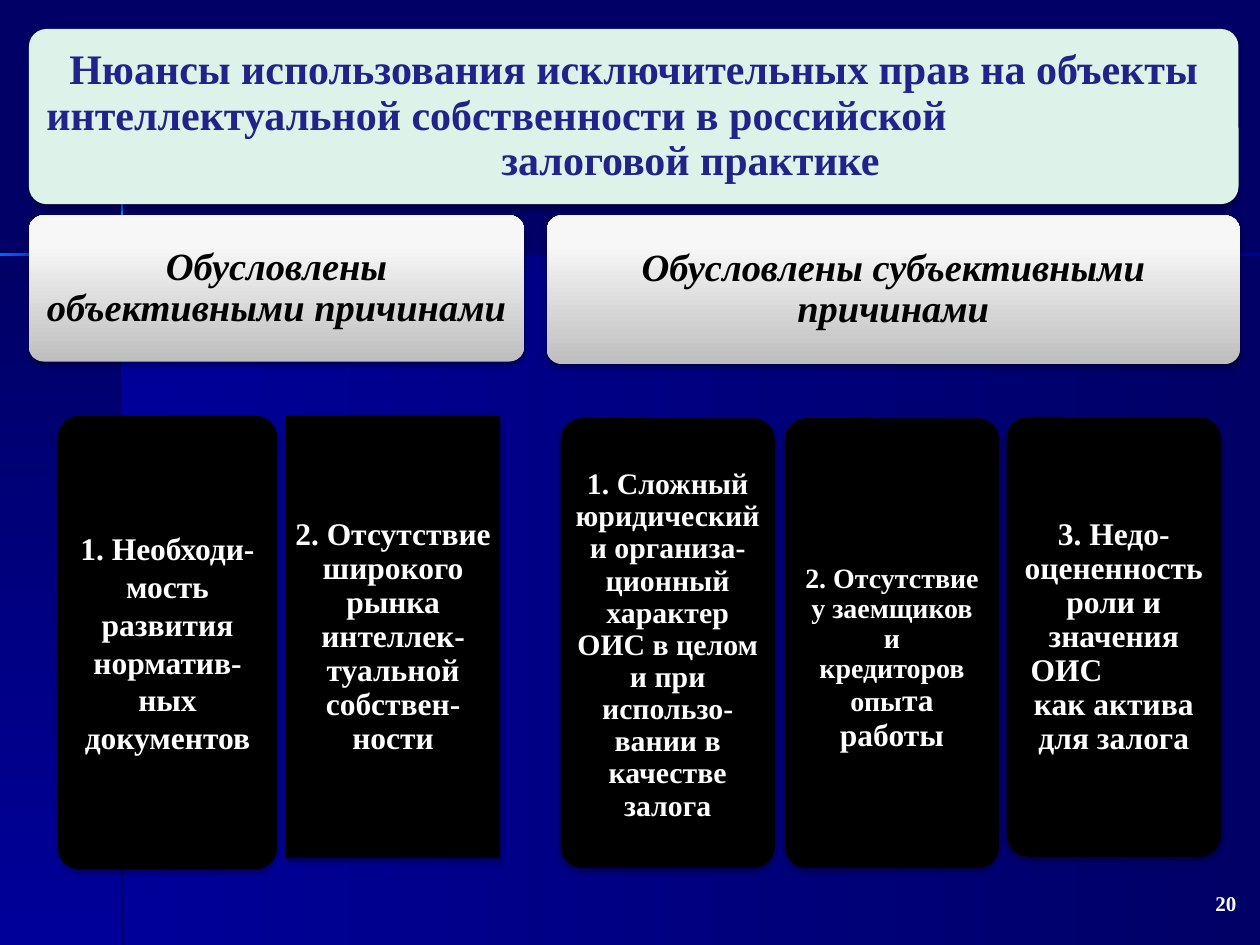
from lxml import etree
from pptx import Presentation
from pptx.dml.color import RGBColor
from pptx.enum.shapes import MSO_SHAPE
from pptx.enum.text import MSO_ANCHOR, PP_ALIGN
from pptx.oxml.ns import qn
from pptx.util import Inches, Pt

RECT, ROUND = MSO_SHAPE.RECTANGLE, MSO_SHAPE.ROUNDED_RECTANGLE
LEFT, CENTER, RIGHT = PP_ALIGN.LEFT, PP_ALIGN.CENTER, PP_ALIGN.RIGHT
MIDDLE = MSO_ANCHOR.MIDDLE
FONT = "Times New Roman"
COLORS = {
    "navy": "000066", "blue": "000099", "bright": "0066FF", "cream": "FFFFCC",
    "mint": "DDF3EA", "title": "22228B", "black": "000000", "white": "FFFFFF",
    "grey": "BEBEBE", "pale": "F7F7F7", "paler": "F8F8F8",
}
SILVER = [(0, "grey"), (80, "pale"), (100, "paler")]


def rgb(name):
    return RGBColor.from_string(COLORS[name])


def fill_gradient(sp, stops, angle):
    """Fill with (percent, colour) stops; the angle runs clockwise."""
    sp.fill.gradient()
    sp.fill.gradient_angle = (360 - angle) % 360
    gs_list = sp._element.spPr.find(qn("a:gradFill")).find(qn("a:gsLst"))
    for gs in list(gs_list):
        gs_list.remove(gs)
    for pos, name in stops:
        gs = etree.SubElement(gs_list, qn("a:gs"), pos=str(pos * 1000))
        etree.SubElement(gs, qn("a:srgbClr"), val=COLORS[name])


def add_block(s, kind, box, fill, angle=270):
    """Add a borderless shape; fill is a colour name or a list of stops."""
    sp = s.shapes.add_shape(kind, *map(Inches, box))
    sp.shadow.inherit = False
    sp.line.fill.background()
    if kind == ROUND:
        sp.adjustments[0] = 0.1
    if isinstance(fill, str):
        sp.fill.solid()
        sp.fill.fore_color.rgb = rgb(fill)
    else:
        fill_gradient(sp, fill, angle)
    return sp


def add_shadow(sp):
    effects = sp._element.spPr.find(qn("a:effectLst"))
    shadow = etree.SubElement(
        effects, qn("a:outerShdw"), blurRad=str(Pt(3.1)), dist=str(Pt(1.8)),
        dir="5400000", rotWithShape="0")
    clr = etree.SubElement(shadow, qn("a:srgbClr"), val=COLORS["black"])
    etree.SubElement(clr, qn("a:alpha"), val="35000")


def set_text(sp, paragraphs, size, color, inset, extra_top=0, spacing=0.9, italic=False):
    """Write paragraphs given as (text, alignment, left indent)."""
    tf = sp.text_frame
    tf.word_wrap = True
    tf.vertical_anchor = MIDDLE
    tf.margin_left = tf.margin_right = tf.margin_bottom = Inches(inset)
    tf.margin_top = Inches(inset + extra_top)
    for i, (text, align, indent) in enumerate(paragraphs):
        p = tf.paragraphs[0] if i == 0 else tf.add_paragraph()
        p.text = text
        p.alignment = align
        p.line_spacing = spacing
        if indent:
            p._p.get_or_add_pPr().set("marL", str(Inches(indent)))
        p.font.name, p.font.size = FONT, Pt(size)
        p.font.bold, p.font.italic = True, italic
        p.font.color.rgb = rgb(color)
    return tf


def add_backdrop(s):
    """Background panels and the thin glowing cross."""
    s.background.fill.solid()
    s.background.fill.fore_color.rgb = rgb("navy")
    panels = [
        ((0.97, 2.02, 9.03, 5.48), 180, ("navy", "blue")),
        ((0, 2.02, 0.97, 5.48), 90, ("navy", "blue")),
    ]
    vertical = [
        (0.01, 1.21, ("navy", "blue")),
        (2.82, 4.68, ("blue", "navy")),
        (2.38, 0.44, ("bright", "blue")),
        (1.21, 0.44, ("blue", "bright")),
        (1.65, 0.73, ("bright", "cream", "bright")),
    ]
    horizontal = [
        (1.77, 8.23, ("blue", "navy")),
        (0, 0.61, ("blue", "bright")),
        (1.33, 0.44, ("bright", "blue")),
        (0.6, 0.73, ("cream", "bright", "cream")),
    ]
    parts = panels
    parts += [((0.96, y, 0.02, h), 90, names) for y, h, names in vertical]
    parts += [((x, 2.01, w, 0.02), 180, names) for x, w, names in horizontal]
    for box, angle, names in parts:
        step = 100 // (len(names) - 1)
        stops = [(i * step, name) for i, name in enumerate(names)]
        add_block(s, RECT, box, stops, angle)


def add_title(s):
    sp = add_block(s, ROUND, (0.23, 0.23, 9.6, 1.39), "mint")
    add_shadow(sp)
    set_text(sp, [
        ("Нюансы использования исключительных прав на объекты", CENTER, 0),
        ("интеллектуальной собственности в российской", LEFT, 0),
        ("залоговой практике", CENTER, 0.9),
    ], 24, "title", 0.1)


def add_heading(s, box, text):
    sp = add_block(s, ROUND, box, SILVER)
    add_shadow(sp)
    set_text(sp, [(text, CENTER, 0)], 22, "black", 0.09, italic=True)


def add_card(s, box, paragraphs, size=18, kind=ROUND, **options):
    sp = add_block(s, kind, box, "black")
    add_shadow(sp)
    return set_text(sp, paragraphs, size, "white", **{"inset": 0.07, **options})


def add_page_number(s, number):
    box = s.shapes.add_textbox(*map(Inches, (7.44, 6.9, 2.47, 0.49)))
    tf = set_text(box, [(number, RIGHT, 0)], 12, "white", 0.1, spacing=1)
    tf.margin_bottom = Inches(0.05)


def main():
    prs = Presentation()
    prs.slide_width, prs.slide_height = Inches(10), Inches(7.5)
    s = prs.slides.add_slide(prs.slide_layouts[6])
    add_backdrop(s)
    add_title(s)

    # Objective reasons
    add_heading(s, (0.23, 1.71, 3.93, 1.16), "Обусловлены объективными причинами")
    add_card(s, (0.46, 3.3, 1.74, 3.6), [
        ("1. Необходи-", CENTER, 0),
        ("мость развития норматив-ных документов", CENTER, 0),
    ], spacing=1)
    add_card(s, (2.27, 3.3, 1.7, 3.51), [
        ("2. Отсутствие широкого рынка интеллек-туальной собствен-ности", CENTER, 0),
    ], kind=RECT)

    # Subjective reasons
    add_heading(s, (4.34, 1.71, 5.5, 1.18), "Обусловлены субъективными причинами")
    add_card(s, (4.45, 3.32, 1.7, 3.57), [
        ("1. Сложный юридический и организа-ционный характер ОИС в целом "
         "и при использо-вании в качестве залога", CENTER, 0),
    ], size=17, extra_top=0.04)
    tf = add_card(s, (6.23, 3.32, 1.7, 3.57), [
        ("2. Отсутствие у заемщиков\vи\vкредиторов опы", CENTER, 0),
    ], size=16, inset=0.05, extra_top=0.24)
    r = tf.paragraphs[0].add_run()
    r.text = "та работы"
    r.font.size = Pt(18)
    add_card(s, (7.99, 3.31, 1.7, 3.49), [
        ("3. Недо-оцененность роли и значения", CENTER, 0),
        ("ОИС", LEFT, 0.07),
        ("как актива для залога", CENTER, 0),
    ])

    add_page_number(s, "20")
    prs.save("out.pptx")


if __name__ == "__main__":
    main()
